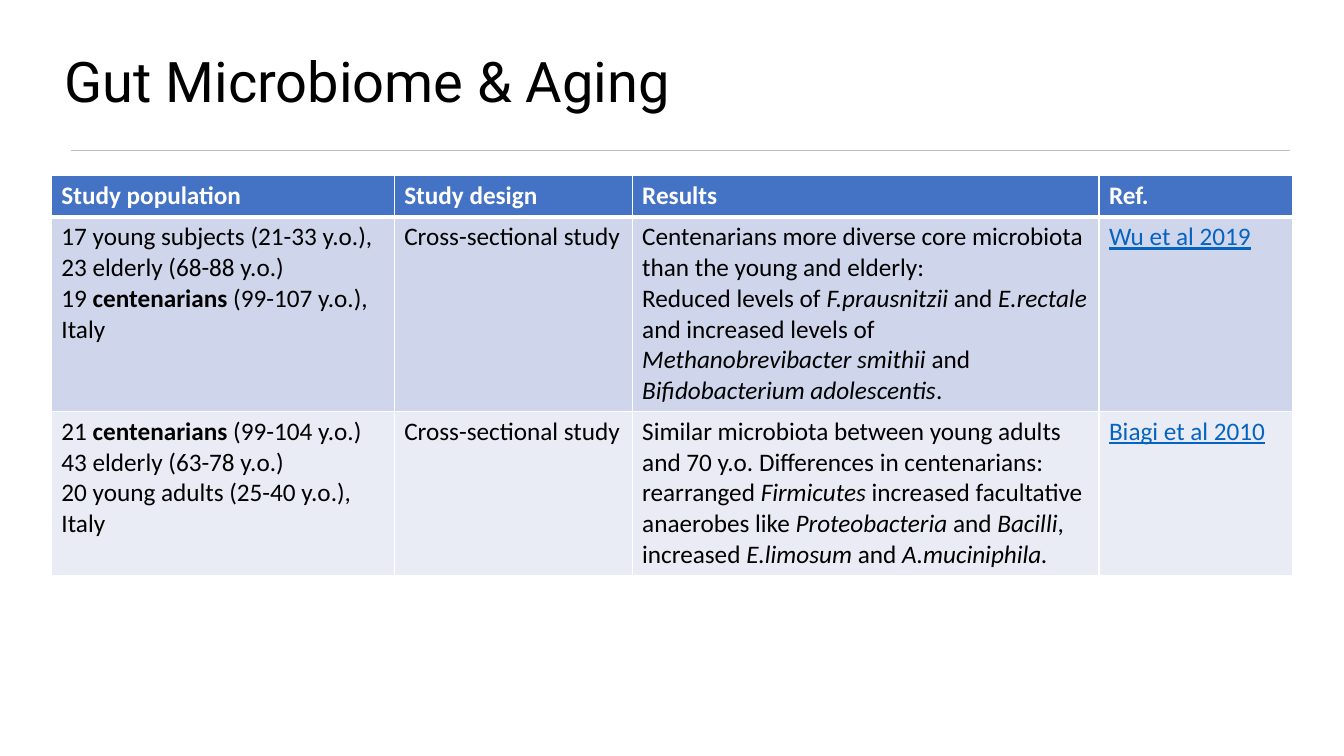
from lxml import etree
from pptx import Presentation, util as u
from pptx.dml.color import RGBColor
from pptx.enum import shapes, text
from pptx.oxml.ns import qn

# Content: one string per paragraph, *...* marks emphasis
TITLE = "Gut Microbiome & Aging"
HEADINGS = ["Study population", "Study design", "Results", "Ref."]
STUDIES = [
    (
        ["17 young subjects (21-33 y.o.), 23 elderly (68-88 y.o.)",
         "19 *centenarians* (99-107 y.o.), Italy"],
        ["Cross-sectional study"],
        ["Centenarians more diverse core microbiota than the young and elderly:",
         "Reduced levels of *F.prausnitzii* and *E.rectale* and increased levels "
         "of *Methanobrevibacter smithii* and *Bifidobacterium adolescentis*."],
        ["Wu et al 2019"],
    ),
    (
        ["21 *centenarians* (99-104 y.o.)",
         "43 elderly (63-78 y.o.)",
         "20 young adults (25-40 y.o.), Italy"],
        ["Cross-sectional study"],
        ["Similar microbiota between young adults and 70 y.o. Differences in "
         "centenarians: rearranged *Firmicutes* increased facultative anaerobes "
         "like *Proteobacteria* and *Bacilli*, increased *E.limosum* and "
         "*A.muciniphila.*"],
        ["Biagi et al 2010"],
    ),
]
COLUMN_WIDTHS = [3.4, 2.36, 4.63, 1.92]
ROW_HEIGHTS = [0.41, 1.9, 1.6]
ROW_FILLS = ["4472C4", "CFD5EA", "E9EBF5"]
POPULATION, REFERENCE = 0, 3


def color(hex_code):
    return RGBColor.from_string(hex_code)


def add_border(cell, side, points):
    border = etree.SubElement(cell._tc.get_or_add_tcPr(), qn(f"a:ln{side}"),
                              w=str(u.Pt(points)))
    solid = etree.SubElement(border, qn("a:solidFill"))
    etree.SubElement(solid, qn("a:srgbClr"), val="FFFFFF")


def write_cell(cell, paragraphs, row, column):
    frame = cell.text_frame
    for n, line in enumerate(paragraphs):
        paragraph = frame.add_paragraph() if n else frame.paragraphs[0]
        for part, words in enumerate(line.split("*")):
            if not words:
                continue
            run = paragraph.add_run()
            run.text = words
            font = run.font
            font.name, font.size = "Calibri", u.Pt(18)
            emphasis = part % 2 == 1
            font.bold = row == 0 or (emphasis and column == POPULATION)
            font.italic = emphasis and column != POPULATION
            is_reference = row > 0 and column == REFERENCE
            font.underline = is_reference
            font.color.rgb = color("FFFFFF" if row == 0 else
                                   "0563C1" if is_reference else "000000")


def main():
    prs = Presentation()
    prs.slide_width, prs.slide_height = u.Inches(13.33), u.Inches(7.5)
    slide = prs.slides.add_slide(prs.slide_layouts[5])

    # Title
    title = slide.shapes.title
    title.left, title.top = u.Inches(0.54), u.Inches(0.49)
    title.width, title.height = u.Inches(11.5), u.Inches(1.45)
    title.text_frame.vertical_anchor = text.MSO_ANCHOR.TOP
    heading = title.text_frame.paragraphs[0]
    heading.alignment = text.PP_ALIGN.LEFT
    heading.line_spacing = 0.9
    run = heading.add_run()
    run.text = TITLE
    run.font.name, run.font.size = "Roboto", u.Pt(40)
    run.font.color.rgb = color("000000")

    # Rule below the title
    rule = slide.shapes.add_connector(shapes.MSO_CONNECTOR.STRAIGHT, u.Inches(0.7),
                                      u.Inches(1.49), u.Inches(12.79), u.Inches(1.49))
    rule.line.color.rgb = color("BFBFBF")
    rule.line.width = u.Pt(0.5)
    etree.SubElement(rule._element.spPr, qn("a:effectLst"))

    # Table of studies
    rows = [[[name] for name in HEADINGS], *STUDIES]
    table = slide.shapes.add_table(len(rows), len(HEADINGS), u.Inches(0.51),
                                   u.Inches(1.74), u.Inches(sum(COLUMN_WIDTHS)),
                                   u.Inches(sum(ROW_HEIGHTS))).table
    for column, width in zip(table.columns, COLUMN_WIDTHS):
        column.width = u.Inches(width)
    for r, (row, height, fill) in enumerate(zip(rows, ROW_HEIGHTS, ROW_FILLS)):
        table.rows[r].height = u.Inches(height)
        for c, paragraphs in enumerate(row):
            cell = table.cell(r, c)
            for side in "LRTB":
                below_header = (r, side) in [(0, "B"), (1, "T")]
                add_border(cell, side, 3 if below_header else 1)
            cell.fill.solid()
            cell.fill.fore_color.rgb = color(fill)
            write_cell(cell, paragraphs, r, c)

    prs.save("out.pptx")


if __name__ == "__main__":
    main()
